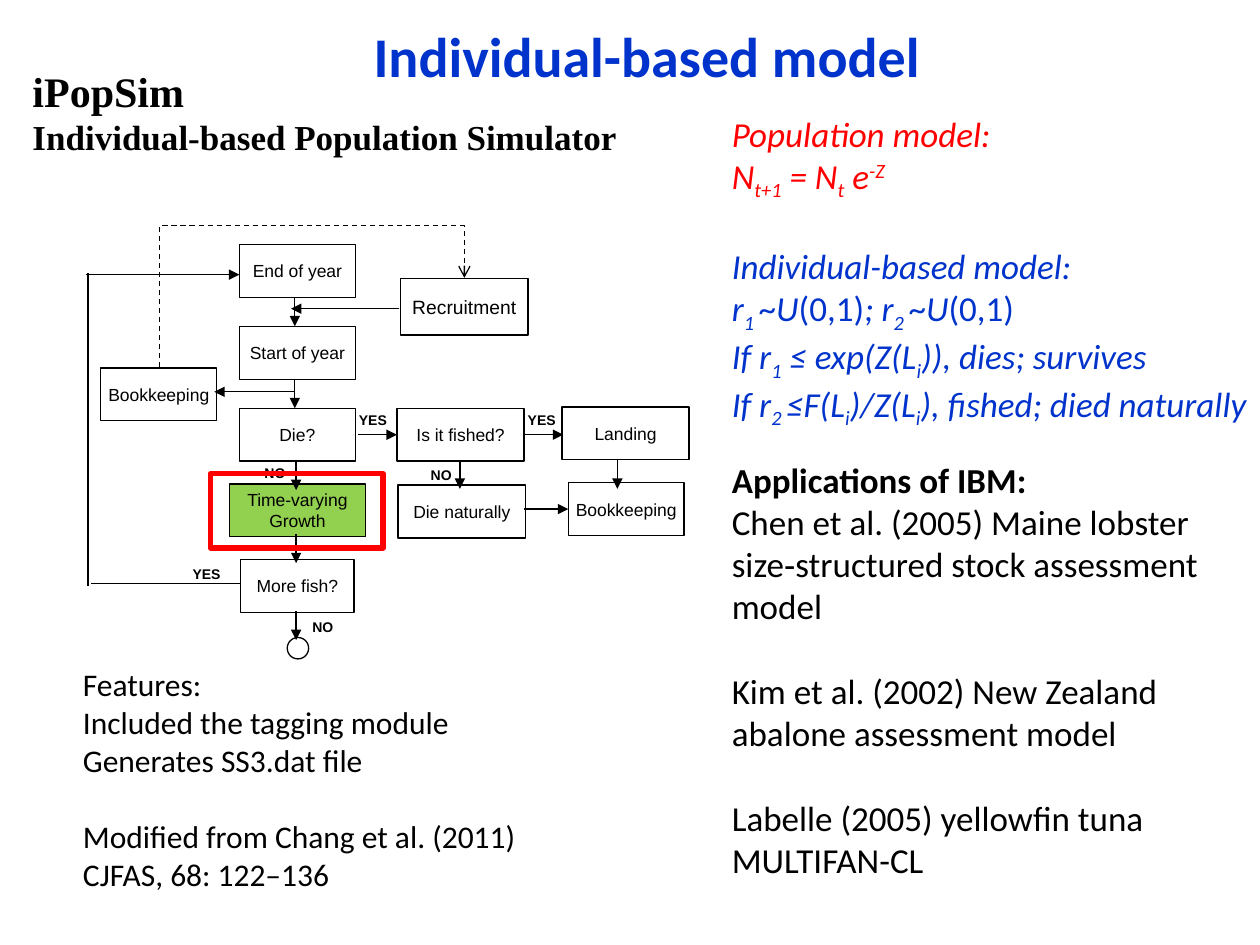
from lxml.etree import SubElement
from pptx import Presentation
from pptx.dml.color import RGBColor
from pptx.enum.dml import MSO_LINE
from pptx.enum.shapes import MSO_CONNECTOR, MSO_SHAPE
from pptx.enum.text import MSO_ANCHOR, MSO_AUTO_SIZE, PP_ALIGN
from pptx.oxml.ns import qn
from pptx.util import Inches, Pt

BLACK, BLUE, RED, GREEN = "000000", "0033CC", "FF0000", "92D050"
BOX_HEIGHT = 0.42
STEP = 0.23  # length of a short downward arrow

# Flow chart boxes: label, left, top, width
STEPS = [
    ("End of year", 1.9, 1.94, 0.92),
    ("Start of year", 1.9, 2.59, 0.92),
    ("Die?", 1.9, 3.24, 0.92),
    ("More fish?", 1.91, 4.44, 0.9),
    ("Bookkeeping", 0.8, 2.92, 0.92),
    ("Is it fished?", 3.15, 3.24, 1.01),
    ("Landing", 4.46, 3.23, 1.01),
    ("Die naturally", 3.16, 3.85, 1.01),
    ("Bookkeeping", 4.51, 3.83, 0.92),
]
DOWN_ARROWS = [(2.34, 2.36), (2.34, 3.01), (2.35, 3.66), (2.35, 4.24),
               (2.35, 4.85), (3.65, 3.65), (4.9, 3.65)]
# Sideways arrows: start x, end x, y
SIDE_ARROWS = [(0.68, 1.9, 2.18), (3.17, 2.31, 2.45), (2.33, 1.7, 3.11),
               (2.84, 3.15, 3.45), (4.15, 4.47, 3.45), (4.16, 4.51, 4.04)]
ANSWERS = [("NO", 2, 3.64), ("NO", 3.32, 3.65), ("NO", 2.38, 4.86),
           ("YES", 2.75, 3.22), ("YES", 4.09, 3.22), ("YES", 1.43, 4.44)]

# Paragraphs are lists of (text, marks): b bold, i italic, _ subscript, ^ superscript
POPULATION = [
    [("Population model:", "i")],
    [("N", "i"), ("t+1", "i_"), (" = N", "i"), ("t", "i_"), (" e", "i"), ("-Z", "i^")],
]
INDIVIDUAL = [
    [("Individual-based model:", "i")],
    [("r", "i"), ("1 ", "i_"), ("~", ""), ("U", "i"), ("(0,1)", ""),
     ("; r", "i"), ("2 ", "i_"), ("~", ""), ("U", "i"), ("(0,1)", "")],
    [("If r", "i"), ("1", "i_"), (" ≤ exp(Z(L", "i"), ("i", "i_"),
     (")), dies; survives", "i")],
    [("If r", "i"), ("2 ", "i_"), ("≤F(L", "i"), ("i", "i_"), (")/Z(L", "i"),
     ("i", "i_"), ("), fished; died naturally", "i")],
]
APPLICATIONS = [
    "Chen et al. (2005) Maine lobster size‐structured stock assessment model",
    "Kim et al. (2002) New Zealand abalone assessment model",
    "Labelle (2005) yellowfin tuna MULTIFAN-CL",
]
FEATURES = ["Features:", "Included the tagging module", "Generates SS3.dat file"]
REFERENCE = ["Modified from Chang et al. (2011)", "CJFAS, 68: 122–136"]


def color(value):
    return RGBColor.from_string(value)


def set_all(target, values):
    for name, value in values.items():
        setattr(target, name, value)


def write(frame, paragraphs, size, font="Calibri", ink=BLACK, gaps=(), align=None):
    """Add paragraphs; those whose index is in gaps get a line of space above."""
    for index, content in enumerate(paragraphs):
        para = frame.add_paragraph() if frame.text else frame.paragraphs[0]
        para.alignment = align
        if index in gaps:
            para.space_before = Pt(size * 1.22)
        spans = [(content, "")] if isinstance(content, str) else content
        for text, marks in spans:
            span = para.add_run()
            span.text = text
            set_all(span.font, {"name": font, "size": Pt(size),
                                "bold": "b" in marks, "italic": "i" in marks})
            span.font.color.rgb = color(ink)
            for mark, shift in (("_", "-25000"), ("^", "30000")):
                if mark in marks:
                    span.font._element.set("baseline", shift)


def add_text(page, left, top, width, height, wrap=True):
    box = page.shapes.add_textbox(*map(Inches, (left, top, width, height)))
    set_all(box.text_frame, {"word_wrap": wrap,
                             "auto_size": MSO_AUTO_SIZE.SHAPE_TO_FIT_TEXT})
    return box.text_frame


def add_box(page, left, top, width, height, fill=None, line=BLACK, weight=0.75,
            kind=MSO_SHAPE.RECTANGLE):
    box = page.shapes.add_shape(kind, *map(Inches, (left, top, width, height)))
    box.shadow.inherit = False
    if fill:
        box.fill.solid()
        box.fill.fore_color.rgb = color(fill)
    else:
        box.fill.background()
    box.line.color.rgb = color(line)
    box.line.width = Pt(weight)
    return box


def add_step(page, lines, left, top, width, height=BOX_HEIGHT, size=10, fill=None):
    frame = add_box(page, left, top, width, height, fill).text_frame
    set_all(frame, {"word_wrap": False, "vertical_anchor": MSO_ANCHOR.MIDDLE})
    write(frame, lines, size, "Arial", align=PP_ALIGN.CENTER)


def add_line(page, x1, y1, x2, y2, head="triangle", weight=0.75,
             kind=MSO_CONNECTOR.STRAIGHT):
    line = page.shapes.add_connector(kind, *map(Inches, (x1, y1, x2, y2)))
    line.line.color.rgb = color(BLACK)
    line.line.width = Pt(weight)
    if head:
        SubElement(line.line._get_or_add_ln(), qn("a:tailEnd"), type=head)
    SubElement(line._element.spPr, qn("a:effectLst"))
    return line


def add_feedback(page):
    """Dashed elbow from bookkeeping up and over to recruitment."""
    elbow = add_line(page, 2.83, 3.77, 2.12, 1.35, "arrow", kind=MSO_CONNECTOR.ELBOW)
    elbow.line.dash_style = MSO_LINE.DASH
    properties = elbow._element.spPr
    properties.find(qn("a:xfrm")).set("rot", "5400000")
    guides = properties.find(qn("a:prstGeom")).find(qn("a:avLst"))
    SubElement(guides, qn("a:gd"), name="adj1", fmla="val 158200")


def add_flow_chart(page):
    for label, left, top, width in STEPS:
        add_step(page, [label], left, top, width)
    add_step(page, ["Recruitment"], 3.18, 2.21, 1.01, 0.45, 11)
    add_step(page, ["Time-varying", "Growth"], 1.82, 3.84, 1.08, fill=GREEN)
    add_box(page, 2.28, 5.06, 0.17, 0.17, kind=MSO_SHAPE.OVAL)

    for x, y in DOWN_ARROWS:
        add_line(page, x, y, x, y + STEP)
    for start, end, y in SIDE_ARROWS:
        add_line(page, start, y, end, y)
    # Loop back to the end of the year
    add_line(page, 1.91, 4.63, 0.72, 4.63, None)
    add_line(page, 0.7, 4.65, 0.7, 2.17, None, 1)
    add_feedback(page)

    for answer, left, top in ANSWERS:
        width = 0.43 if answer == "YES" else 0.39
        frame = add_text(page, left, top, width, 0.23, answer == "NO")
        write(frame, [[(answer, "b")]], 8, "Arial")
    # Highlight around growth
    add_box(page, 1.67, 3.76, 1.37, 0.59, line=RED, weight=3)


def main():
    deck = Presentation()
    set_all(deck, {"slide_width": Inches(10), "slide_height": Inches(7.5)})
    page = deck.slides.add_slide(deck.slide_layouts[6])

    # Headings
    title = add_text(page, 0.39, 0.12, 9.49, 0.64)
    write(title, [[("Individual-based model", "b")]], 32, ink=BLUE,
          align=PP_ALIGN.CENTER)
    simulator = add_text(page, 0.16, 0.47, 4.87, 0.84, False)
    write(simulator, [[("iPopSim", "b")]], 24, "Times New Roman")
    write(simulator, [[("Individual-based Population Simulator", "b")]], 20,
          "Times New Roman")

    add_flow_chart(page)

    # Equations and applications
    equations = add_text(page, 5.71, 0.84, 4.37, 2.34, False)
    write(equations, POPULATION, 20, ink=RED)
    write(equations, INDIVIDUAL, 20, ink=BLUE, gaps=[0])
    applications = add_text(page, 5.71, 3.59, 4.17, 3.47)
    write(applications, [[("Applications of IBM:", "b")]] + APPLICATIONS, 20,
          gaps=[2, 3])

    # Features
    features = add_text(page, 0.56, 5.23, 3.68, 1.92, False)
    write(features, FEATURES + REFERENCE, 18, gaps=[len(FEATURES)])

    deck.save("out.pptx")


if __name__ == "__main__":
    main()
